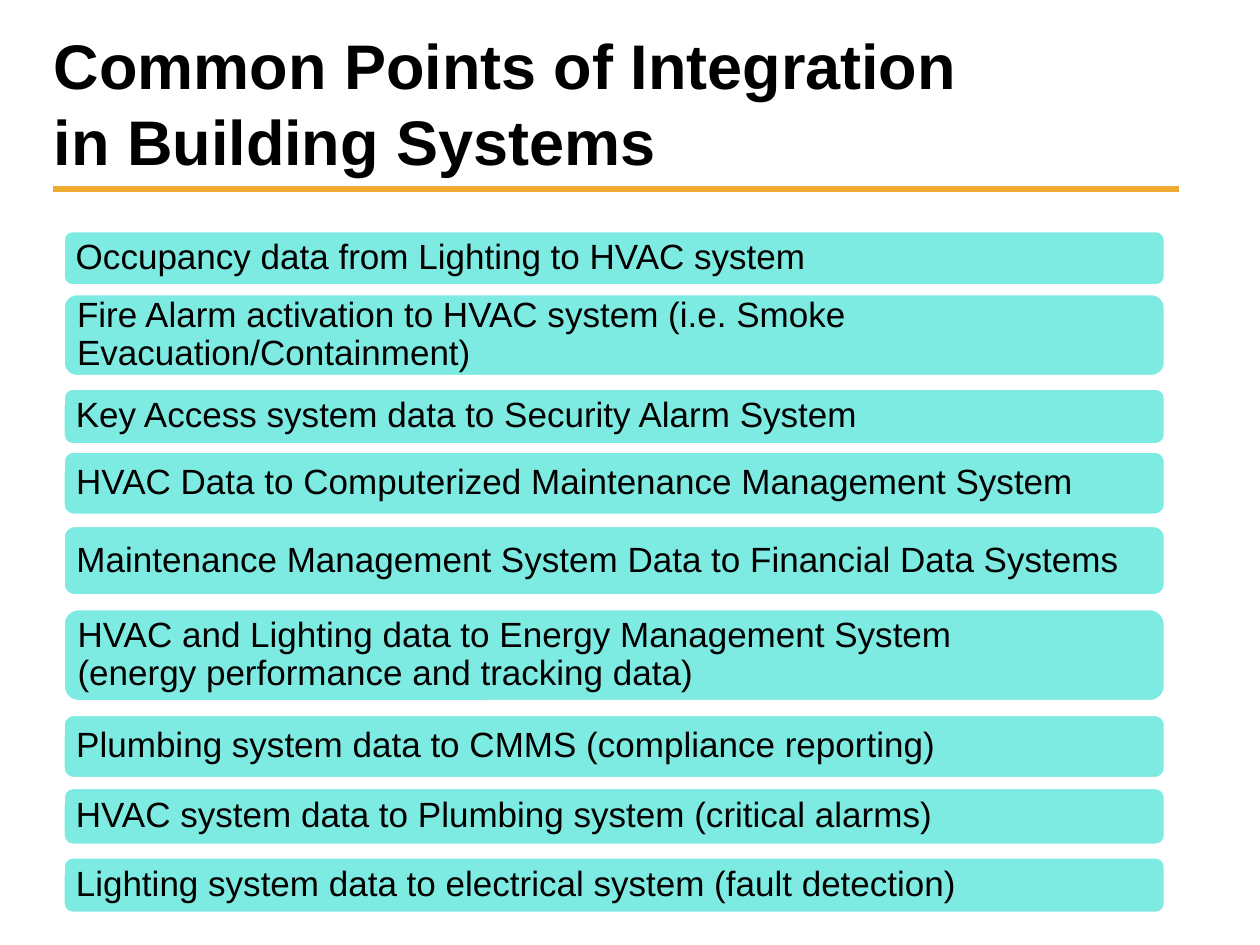
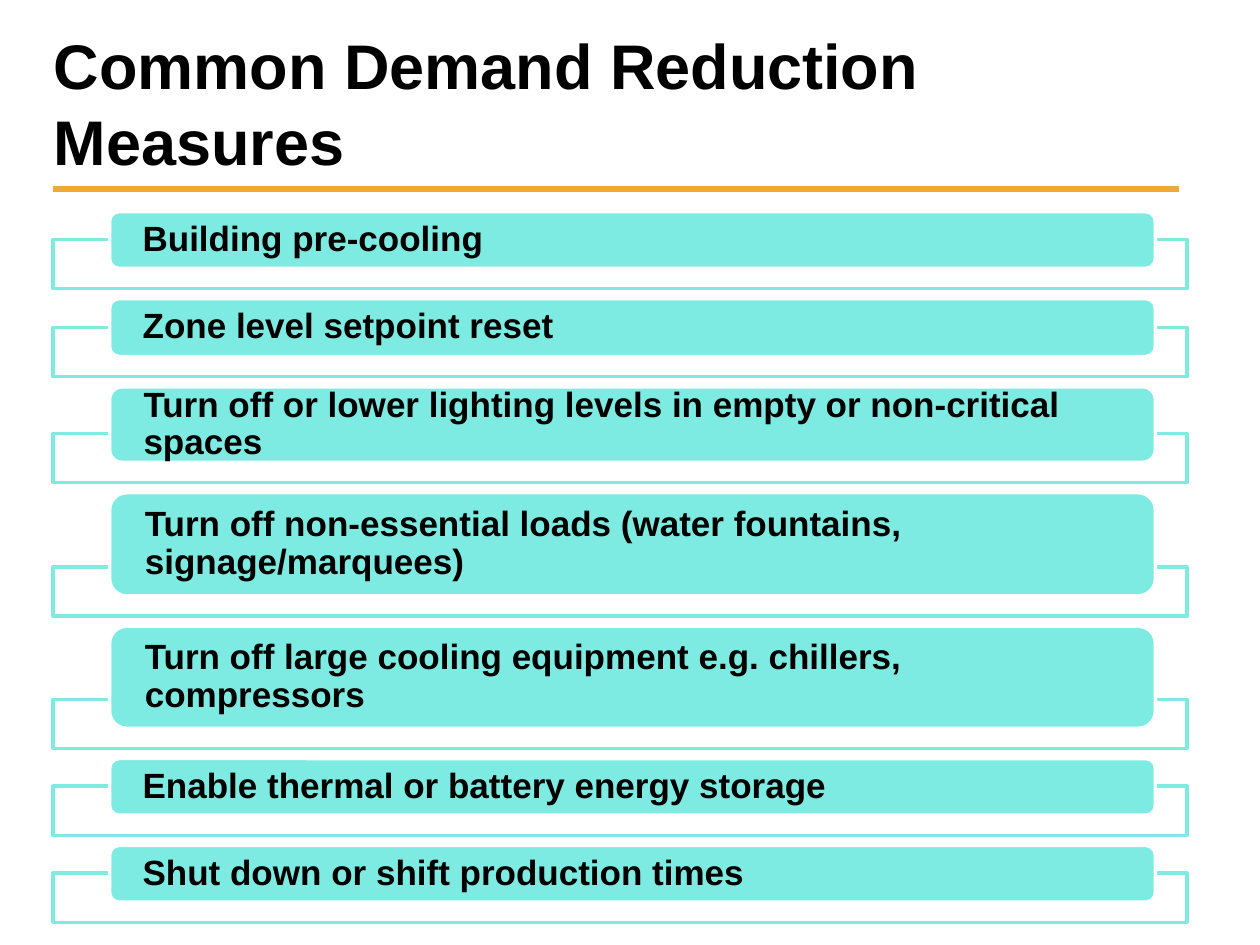
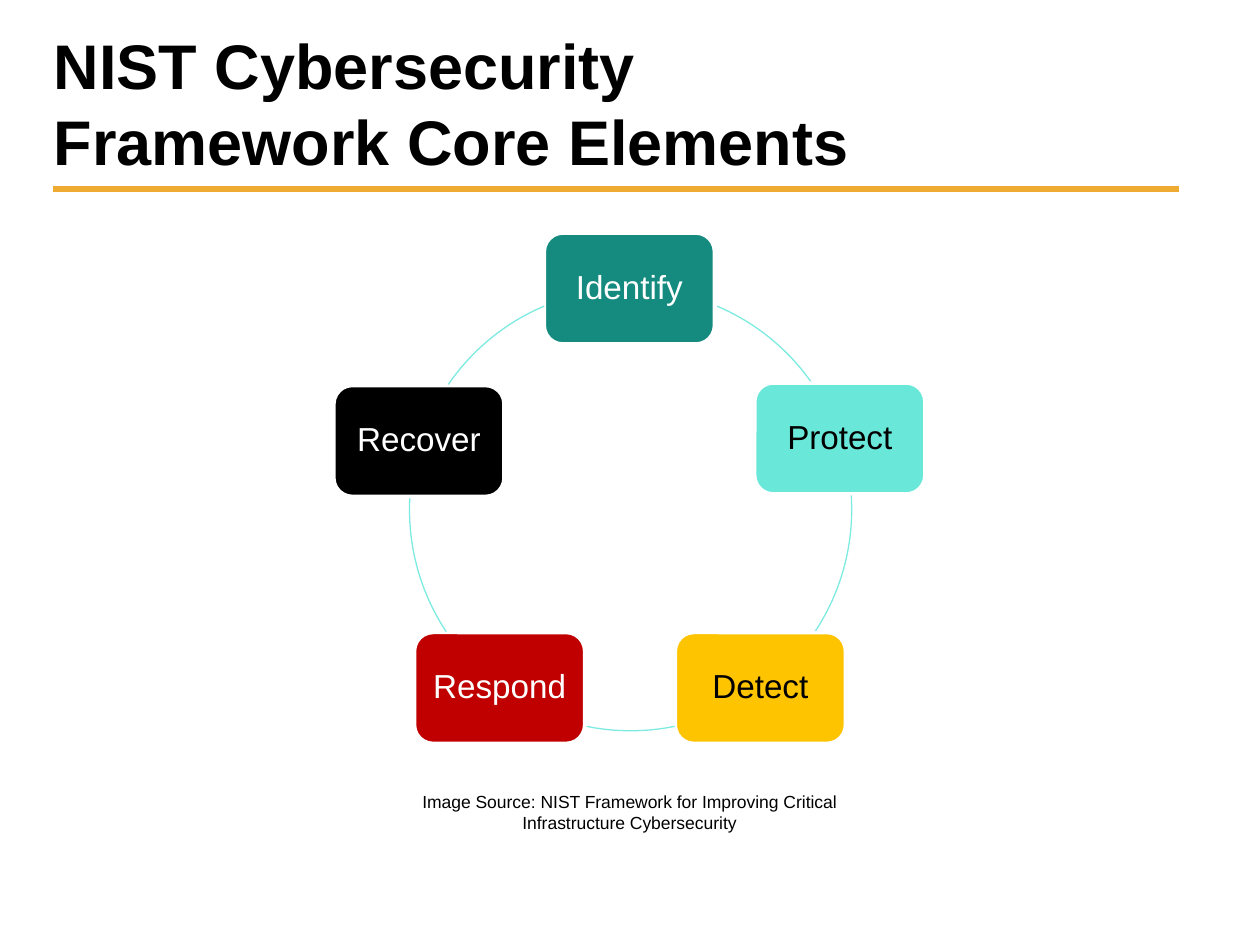
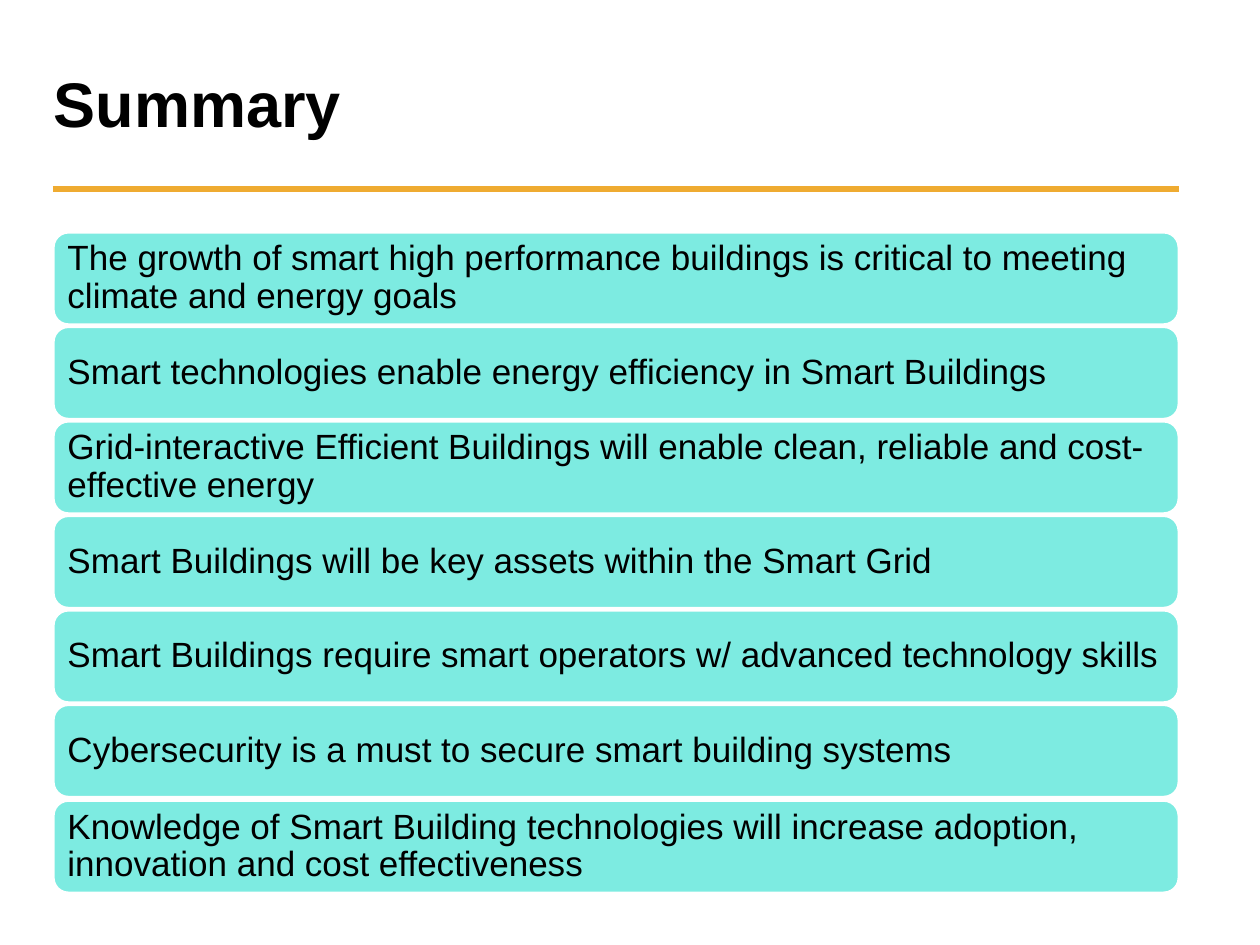
from dataclasses import dataclass
from typing import Optional

from lxml import etree
from pptx import Presentation
from pptx import util as u
from pptx.dml.color import RGBColor
from pptx.enum import shapes, text
from pptx.oxml.ns import qn

PX = 9144  # 100 px to the inch
FONT = "Arial"
COLORS = {
    "black": "000000",
    "white": "FFFFFF",
    "rule": "EFAB31",
    "aqua": "7DEBE1",
    "teal": "148B7E",
    "turquoise": "69E8DA",
    "yellow": "FEC400",
    "red": "C00000",
}


@dataclass(frozen=True)
class Box:
    left: int
    top: int
    width: int
    height: int

    def emu(self) -> tuple:
        return tuple(px * PX for px in (self.left, self.top, self.width, self.height))


@dataclass(frozen=True)
class TextStyle:
    size: int
    color: str = "black"
    bold: bool = False
    align: text.PP_ALIGN = text.PP_ALIGN.LEFT
    anchor: text.MSO_ANCHOR = text.MSO_ANCHOR.MIDDLE
    spacing: Optional[float] = None
    inset_x: int = 10
    inset_y: int = 5


@dataclass(frozen=True)
class Bar:
    top: int
    height: int
    label: str


@dataclass(frozen=True)
class Element:
    label: str
    left: int
    top: int
    fill: str
    color: str


TITLE = TextStyle(36, bold=True)
BAR_TEXT = TextStyle(20, spacing=0.9, inset_x=8, inset_y=8)
MEASURE_TEXT = TextStyle(20, bold=True, spacing=0.9, inset_x=24, inset_y=0)
CAPTION = TextStyle(10, align=text.PP_ALIGN.CENTER, anchor=text.MSO_ANCHOR.TOP)

INTEGRATION_POINTS = [
    Bar(183, 44, "Occupancy data from Lighting to HVAC system"),
    Bar(233, 66, "Fire Alarm activation to HVAC system (i.e. Smoke Evacuation/Containment)"),
    Bar(308, 45, "Key Access system data to Security Alarm System"),
    Bar(358, 51, "HVAC Data to Computerized Maintenance Management System"),
    Bar(417, 56, "Maintenance Management System Data to Financial Data Systems"),
    Bar(483, 74, "HVAC and Lighting data to Energy Management System\n"
                 "(energy performance and tracking data)"),
    Bar(567, 51, "Plumbing system data to CMMS (compliance reporting)"),
    Bar(625, 46, "HVAC system data to Plumbing system (critical alarms)"),
    Bar(680, 45, "Lighting system data to electrical system (fault detection)"),
]

# Bar height and wording; the tops follow from the stacking
MEASURES = [
    (45, "Building pre-cooling"),
    (46, "Zone level setpoint reset"),
    (60, "Turn off or lower lighting levels in empty or non-critical spaces"),
    (82, "Turn off non-essential loads (water fountains, signage/marquees)"),
    (81, "Turn off large cooling equipment e.g. chillers, compressors"),
    (45, "Enable thermal or battery energy storage"),
    (45, "Shut down or shift production times"),
]

CORE_ELEMENTS = [
    Element("Identify", 432, 185, "teal", "white"),
    Element("Protect", 599, 304, "turquoise", "black"),
    Element("Detect", 536, 502, "yellow", "black"),
    Element("Respond", 329, 502, "red", "white"),
    Element("Recover", 265, 306, "black", "white"),
]

# Start and end of each arc, in degrees clockwise from the right
CYCLE_ARCS = [(293, 325.3), (356.3, 33.5), (78.5, 101.5), (146.5, 183.1), (214.5, 247)]

SUMMARY = [
    "The growth of smart high performance buildings is critical to meeting climate and energy goals",
    "Smart technologies enable energy efficiency in Smart Buildings",
    "Grid-interactive Efficient Buildings will enable clean, reliable and cost- effective energy",
    "Smart Buildings will be key assets within the Smart Grid",
    "Smart Buildings require smart operators w/ advanced technology skills",
    "Cybersecurity is a must to secure smart building systems",
    "Knowledge of Smart Building technologies will increase adoption, "
    "innovation and cost effectiveness",
]


def rgb(name: str) -> RGBColor:
    return RGBColor.from_string(COLORS[name])


def set_text(shape, content: str, style: TextStyle) -> None:
    frame = shape.text_frame
    frame.word_wrap = True
    frame.vertical_anchor = style.anchor
    frame.margin_left = frame.margin_right = style.inset_x * PX
    frame.margin_top = frame.margin_bottom = style.inset_y * PX
    paragraph = frame.paragraphs[0]
    paragraph.text = content
    paragraph.alignment = style.align
    if style.spacing:
        paragraph.line_spacing = style.spacing
    for run in paragraph.runs:
        run.font.name = FONT
        run.font.size = u.Pt(style.size)
        run.font.bold = style.bold
        run.font.color.rgb = rgb(style.color)


def add_text(slide, box: Box, content: str, style: TextStyle) -> None:
    set_text(slide.shapes.add_textbox(*box.emu()), content, style)


def add_shape(slide, kind, box: Box, fill: Optional[str], line: str, width: float = 2):
    shape = slide.shapes.add_shape(kind, *box.emu())
    shape.shadow.inherit = False
    if fill:
        shape.fill.solid()
        shape.fill.fore_color.rgb = rgb(fill)
    else:
        shape.fill.background()
    shape.line.color.rgb = rgb(line)
    shape.line.width = u.Pt(width)
    return shape


def add_bar(slide, box: Box, label: str, style: TextStyle, fill: str = "aqua") -> None:
    bar = add_shape(slide, shapes.MSO_SHAPE.ROUNDED_RECTANGLE, box, fill, "white")
    set_text(bar, label, style)


def add_bracket(slide, box: Box) -> None:
    bracket = add_shape(slide, shapes.MSO_SHAPE.RECTANGLE, box, "white", "aqua")
    color = bracket._element.spPr.find(qn("a:solidFill"))[0]
    etree.SubElement(color, qn("a:alpha"), val="90000")


def add_titled_slide(presentation, title: str, title_width: int):
    slide = presentation.slides.add_slide(presentation.slide_layouts[6])
    # Rule under the title
    rule = slide.shapes.add_connector(
        shapes.MSO_CONNECTOR.STRAIGHT, 42 * PX, 150 * PX, 936 * PX, 150 * PX)
    rule.line.color.rgb = rgb("rule")
    rule.line.width = u.Pt(4)
    etree.SubElement(rule._element.spPr, qn("a:effectLst"))
    add_text(slide, Box(33, 27, title_width, 108), title, TITLE)
    return slide


def build_integration(presentation) -> None:
    slide = add_titled_slide(
        presentation, "Common Points of Integration\nin Building Systems", 817)
    for bar in INTEGRATION_POINTS:
        add_bar(slide, Box(50, bar.top, 875, bar.height), bar.label, BAR_TEXT)


def build_measures(presentation) -> None:
    slide = add_titled_slide(presentation, "Common Demand Reduction Measures", 725)
    top, overlap, bracket_height, gap = 168, 23, 39, 8
    for height, label in MEASURES:
        bracket_top = top + height - overlap
        add_bracket(slide, Box(42, bracket_top, 900, bracket_height))
        add_bar(slide, Box(87, top, 830, height), label, MEASURE_TEXT)
        top = bracket_top + bracket_height + gap


def build_framework(presentation) -> None:
    slide = add_titled_slide(
        presentation, "NIST Cybersecurity\nFramework Core Elements", 833)
    # Cycle of elements joined by arcs of one circle
    for element, (start, end) in zip(CORE_ELEMENTS, CYCLE_ARCS):
        style = TextStyle(19, element.color, align=text.PP_ALIGN.CENTER,
                          spacing=0.9, inset_x=8, inset_y=8)
        add_bar(slide, Box(element.left, element.top, 135, 88),
                element.label, style, element.fill)
        arc = add_shape(slide, shapes.MSO_SHAPE.ARC, Box(325, 229, 351, 351),
                        None, "aqua", 0.75)
        # Angles are stored in 60000ths of a degree, adjustments in 100000ths
        arc.adjustments[0] = start * 0.6
        arc.adjustments[1] = end * 0.6
    add_text(slide, Box(285, 623, 429, 44),
             "Image Source: NIST Framework for Improving Critical "
             "Infrastructure Cybersecurity", CAPTION)


def build_summary(presentation) -> None:
    slide = add_titled_slide(presentation, "Summary", 725)
    first_top, last_top = 184, 635
    for index, label in enumerate(SUMMARY):
        top = first_top + (last_top - first_top) * index // (len(SUMMARY) - 1)
        add_bar(slide, Box(42, top, 894, 74), label, BAR_TEXT)


def main() -> None:
    presentation = Presentation()
    presentation.slide_width = 1000 * PX
    presentation.slide_height = 750 * PX
    build_integration(presentation)
    build_measures(presentation)
    build_framework(presentation)
    build_summary(presentation)
    presentation.save("out.pptx")


if __name__ == "__main__":
    main()
